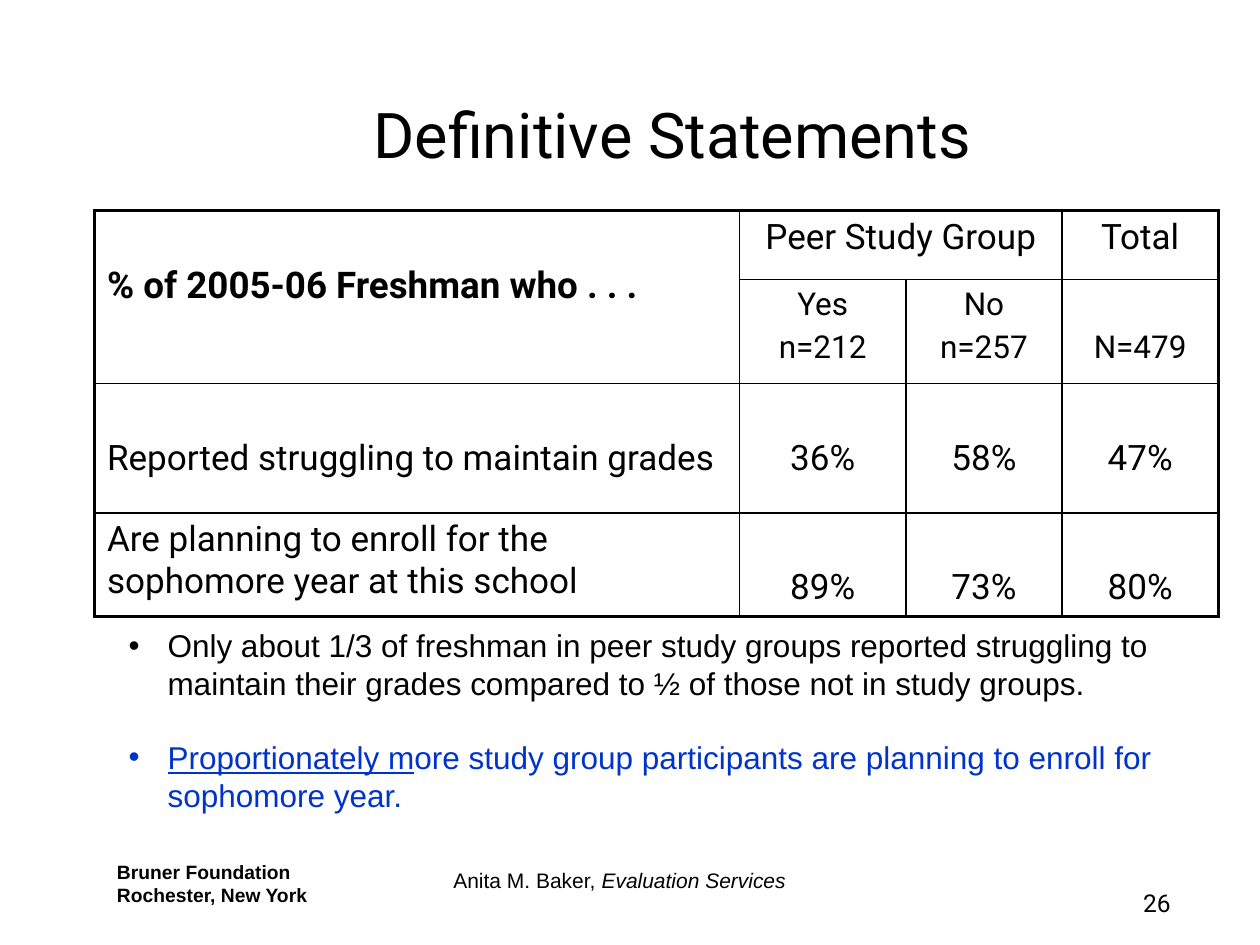
from lxml.etree import SubElement
from pptx import Presentation
from pptx.dml.color import RGBColor
from pptx.enum.text import MSO_ANCHOR, MSO_AUTO_SIZE, PP_ALIGN
from pptx.oxml import parse_xml
from pptx.oxml.ns import nsdecls, qn
from pptx.util import Inches, Pt

BLACK, BLUE = "000000", "0033CC"
TITLE = "Definitive Statements"
COLUMNS = [5.12, 1.32, 1.24, 1.24]
ROWS = [0.55, 0.82, 1.03, 0.82]
TOP, LOWERED = 0.05, 0.43
# row, column, lines, size, bold, top margin
CELLS = [
    (0, 0, ["% of 2005-06 Freshman who . . ."], 21, True, LOWERED),
    (0, 1, ["Peer Study Group"], 20, False, TOP),
    (0, 3, ["Total"], 20, False, TOP),
    (1, 1, ["Yes", "n=212"], 18, False, TOP),
    (1, 2, ["No", "n=257"], 18, False, TOP),
    (1, 3, ["N=479"], 18, False, 0.39),
    (2, 0, ["Reported struggling to maintain grades"], 20, False, LOWERED),
    (2, 1, ["36%"], 20, False, LOWERED),
    (2, 2, ["58%"], 20, False, LOWERED),
    (2, 3, ["47%"], 20, False, LOWERED),
    (3, 0, ["Are planning to enroll for the sophomore year at this school"], 20, False, TOP),
    (3, 1, ["89%"], 20, False, LOWERED),
    (3, 2, ["73%"], 20, False, LOWERED),
    (3, 3, ["80%"], 20, False, LOWERED),
]
FINDINGS = [
    (BLACK, [("Only about 1/3 of freshman in peer study groups reported struggling to "
              "maintain their grades compared to ½ of those not in study groups.", False)]),
    (BLUE, [("Proportionately m", True),
            ("ore study group participants are planning to enroll for sophomore year.", False)]),
]
FOOTERS = [
    ((0.83, 6.78, 2.08, 0.47), ["Bruner Foundation", "Rochester, New York"],
     "Arial", 11, True, PP_ALIGN.LEFT),
    ((3.5, 6.84, 3.17, 0.57), ["Anita M. Baker, "], "Arial", 12, False, PP_ALIGN.LEFT),
    ((8.84, 7, 0.55, 0.5), ["26"], "Roboto", 14, False, PP_ALIGN.RIGHT),
]


def style(font, name, size, color=BLACK, bold=False):
    """Set the typeface, size, colour and weight of a font."""
    font.name, font.size, font.bold = name, Pt(size), bold
    font.color.rgb = RGBColor.from_string(color)


def place(shape, left, top, width, height):
    """Move and size a shape in inches."""
    shape.left, shape.top = Inches(left), Inches(top)
    shape.width, shape.height = Inches(width), Inches(height)


def write(frame, lines, name, size, bold, align, gap=0):
    """Write lines as paragraphs with a gap between them."""
    for index, line in enumerate(lines):
        para = frame.paragraphs[0] if index == 0 else frame.add_paragraph()
        para.text, para.alignment = line, align
        para.space_before = Pt(gap if index else 0)
        style(para.font, name, size, bold=bold)


def set_borders(cell, row, column):
    """Draw thick outer and thin inner borders around a cell."""
    edges = [("lnL", column == 0), ("lnR", column == len(COLUMNS) - 1),
             ("lnT", row == 0), ("lnB", row == len(ROWS) - 1)]
    properties = cell._tc.get_or_add_tcPr()
    for index, (tag, outer) in enumerate(edges):
        width = Pt(2.25 if outer else 1)
        line = parse_xml(f'<a:{tag} {nsdecls("a")} w="{int(width)}"/>')
        fill = SubElement(line, qn("a:solidFill"))
        SubElement(fill, qn("a:srgbClr")).set("val", BLACK)
        properties.insert(index, line)


def add_results(page):
    """Add the table of survey results."""
    table = page.shapes.add_table(
        len(ROWS), len(COLUMNS), Inches(0.75), Inches(1.67),
        Inches(sum(COLUMNS)), Inches(sum(ROWS))).table
    table.first_row = table.horz_banding = False
    for column, width in zip(table.columns, COLUMNS):
        column.width = Inches(width)
    for row, height in zip(table.rows, ROWS):
        row.height = Inches(height)
    table.cell(0, 0).merge(table.cell(1, 0))
    table.cell(0, 1).merge(table.cell(0, 2))
    for row in range(len(ROWS)):
        for column in range(len(COLUMNS)):
            cell = table.cell(row, column)
            cell.fill.background()
            set_borders(cell, row, column)
    for row, column, lines, size, bold, margin in CELLS:
        cell = table.cell(row, column)
        cell.margin_top = Inches(margin)
        align = PP_ALIGN.CENTER if column else PP_ALIGN.LEFT
        write(cell.text_frame, lines, "Roboto", size, bold, align, size * 0.2)


def add_findings(body):
    """Fill the body with bulleted findings."""
    place(body, 0.92, 4.92, 8.83, 1.92)
    frame = body.text_frame
    frame.auto_size = MSO_AUTO_SIZE.NONE
    for index, (color, spans) in enumerate(FINDINGS):
        para = frame.paragraphs[0] if index == 0 else frame.add_paragraph()
        para.space_before = Pt(20.7 if index else 0)
        properties = para._p.get_or_add_pPr()
        properties.set("marL", str(Inches(0.31)))
        properties.set("indent", str(-Inches(0.31)))
        SubElement(properties, qn("a:buChar")).set("char", "•")
        style(para.font, "Arial", 18, color)
        for text, underlined in spans:
            span = para.add_run()
            span.text = text
            if underlined:
                span.font.underline = True


def main():
    """Build the slide and save it."""
    deck = Presentation()
    deck.slide_width, deck.slide_height = Inches(10), Inches(7.5)
    page = deck.slides.add_slide(deck.slide_layouts[1])
    title, body = page.placeholders
    place(title, 1.17, 0.58, 8.33, 0.83)
    title.text_frame.vertical_anchor = MSO_ANCHOR.BOTTOM
    write(title.text_frame, [TITLE], "Roboto", 36, False, PP_ALIGN.CENTER)
    add_results(page)
    add_findings(body)
    for area, lines, name, size, bold, align in FOOTERS:
        box = page.shapes.add_textbox(*map(Inches, area))
        box.text_frame.word_wrap = True
        write(box.text_frame, lines, name, size, bold, align)
        if lines[0].startswith("Anita"):
            span = box.text_frame.paragraphs[0].add_run()
            span.text = "Evaluation Services"
            span.font.italic = True
    deck.save("out.pptx")


if __name__ == "__main__":
    main()
